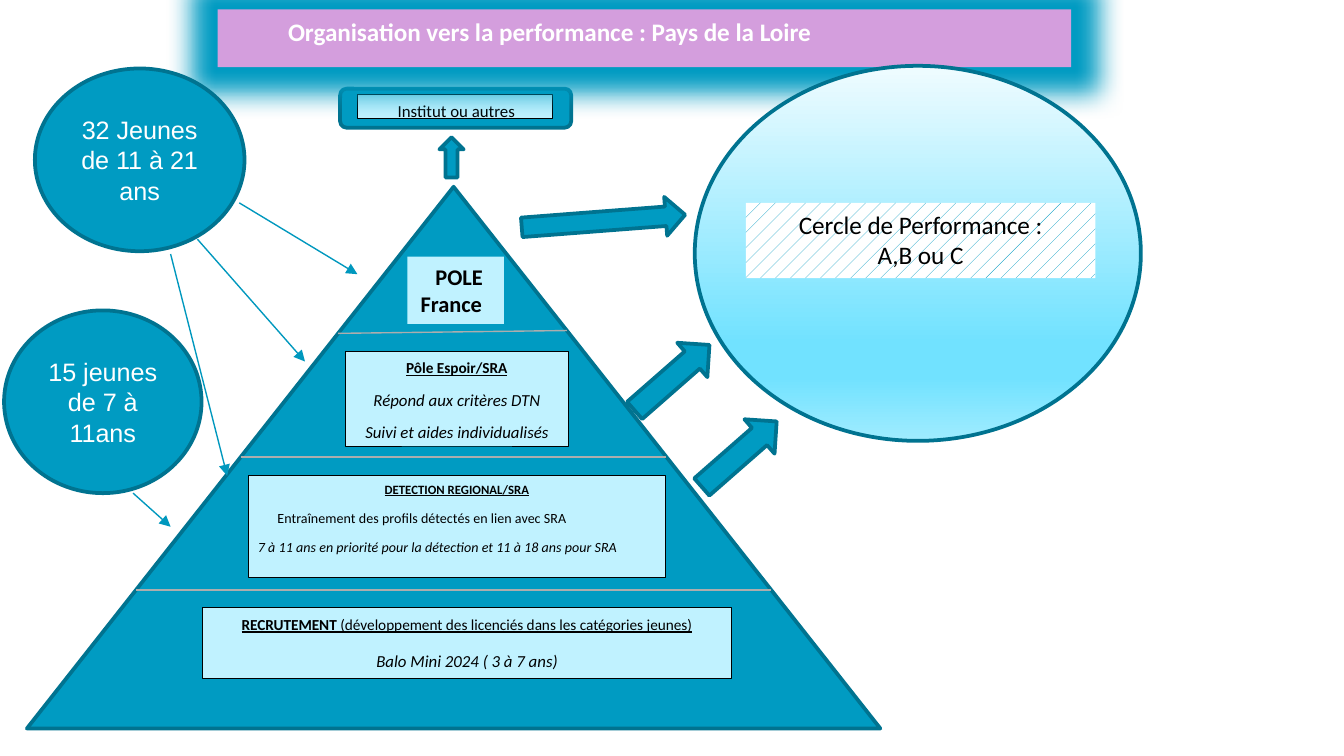
from lxml import etree
from pptx import Presentation
from pptx.dml.color import RGBColor
from pptx.enum.dml import MSO_PATTERN
from pptx.enum.shapes import MSO_CONNECTOR, MSO_SHAPE as Preset
from pptx.enum.text import MSO_ANCHOR as Anchor, MSO_AUTO_SIZE, PP_ALIGN as Align
from pptx.oxml.ns import qn
from pptx.util import Pt

TEAL = RGBColor(0x00, 0x9B, 0xC2)
DARK_TEAL = RGBColor(0x00, 0x73, 0x90)
LINK_TEAL = RGBColor(0x00, 0x98, 0xBE)
PALE = RGBColor(0xC0, 0xF2, 0xFF)
LILAC = RGBColor(0xD4, 0x9E, 0xDD)
GREY = RGBColor(0xAD, 0xAD, 0xAD)
BLACK = RGBColor(0x00, 0x00, 0x00)
WHITE = RGBColor(0xFF, 0xFF, 0xFF)
CIRCLE_STOPS = [
    (0, RGBColor(0xEF, 0xFC, 0xFF)),
    (74, RGBColor(0x71, 0xE2, 0xFF)),
    (83, RGBColor(0x71, 0xE2, 0xFF)),
    (100, RGBColor(0xA0, 0xEC, 0xFF)),
]
WIDE_INSETS = (7.2, 3.6)
TIGHT_INSETS = (5, 2.7)


def add_preset(slide, preset, box, fill=TEAL, outline=DARK_TEAL, weight=2):
    shape = slide.shapes.add_shape(preset, *map(Pt, box))
    shape.shadow.inherit = False
    if fill is not None:
        shape.fill.solid()
        shape.fill.fore_color.rgb = fill
    if outline is None:
        shape.line.fill.background()
    else:
        shape.line.color.rgb = outline
        shape.line.width = Pt(weight)
    return shape


def add_line(slide, start, end, color, arrow=False):
    line = slide.shapes.add_connector(
        MSO_CONNECTOR.STRAIGHT, *map(Pt, (*start, *end)))
    line.line.color.rgb = color
    line.line.width = Pt(0.75)
    properties = line._element.spPr
    if arrow:
        etree.SubElement(properties.find(qn("a:ln")), qn("a:tailEnd"), type="triangle")
    etree.SubElement(properties, qn("a:effectLst"))


def write(shape, paragraphs, color=BLACK, font="Calibri", align=Align.CENTER,
          insets=WIDE_INSETS, anchor=Anchor.TOP, spacing=1, after=0):
    frame = shape.text_frame
    frame.word_wrap = True
    frame.auto_size = MSO_AUTO_SIZE.NONE
    frame.vertical_anchor = anchor
    frame.margin_left = frame.margin_right = Pt(insets[0])
    frame.margin_top = frame.margin_bottom = Pt(insets[1])
    for index, runs in enumerate(paragraphs):
        paragraph = frame.add_paragraph() if index else frame.paragraphs[0]
        paragraph.alignment = align
        paragraph.line_spacing = spacing
        paragraph.space_before = Pt(0)
        paragraph.space_after = Pt(after)
        for text, size, style in runs:
            run = paragraph.add_run()
            run.text = text
            run.font.name = font
            run.font.size = Pt(size)
            run.font.color.rgb = color
            run.font.bold = "b" in style
            run.font.italic = "i" in style
            run.font.underline = "u" in style
    return frame.paragraphs


def indent_first_line(paragraph, points):
    paragraph._p.get_or_add_pPr().set("indent", str(Pt(points)))


def add_tier(slide, box, paragraphs, spacing=1.07, after=6):
    tier = add_preset(slide, Preset.RECTANGLE, box, PALE, BLACK, 0.5)
    return write(tier, paragraphs, insets=TIGHT_INSETS, spacing=spacing, after=after)


def add_pyramid(slide, box):
    left, top, width, height = box
    add_preset(slide, Preset.ISOSCELES_TRIANGLE, box)

    for left_drop, right_drop in ((216, 216), (144.7, 144.7), (78.5, 77)):
        middle, slope = left + width / 2, width / 2 / height
        add_line(slide, (middle - slope * left_drop, top + left_drop),
                 (middle + slope * right_drop, top + right_drop), GREY)

    add_tier(slide, (left + 94.3, top + 225.3, 283, 38.2), [
        [("RECRUTEMENT ", 8.2, "bu"),
         ("(développement des licenciés dans les catégories jeunes)", 8.2, "u")],
        [("Balo Mini 2024 ( 3 à 7 ans)", 9, "i")],
    ], spacing=1.15, after=7.5)

    detection = add_tier(slide, (left + 118.8, top + 154.8, 223.2, 54.7), [
        [("DETECTION REGIONAL/SRA", 6.8, "bu")],
        [("Entraînement des profils détectés en lien avec SRA", 7.5, "")],
        [("7 à 11 ans en priorité pour la détection et 11 à 18 ans pour SRA", 7.5, "i")],
    ])
    for paragraph in detection[1:]:
        paragraph.alignment = Align.LEFT
    indent_first_line(detection[1], 10.5)

    add_tier(slide, (left + 170.6, top + 88.5, 119.5, 50.4), [
        [("Pôle Espoir/SRA", 8.2, "bu")],
        [("Répond aux critères DTN", 9, "i")],
        [("Suivi et aides individualisés", 9, "i")],
    ])

    summit = add_preset(slide, Preset.RECTANGLE,
                        (left + 203.8, top + 37.4, 51.8, 36), PALE, None)
    label = write(summit, [[("POLE France", 12, "b")]], align=Align.LEFT)
    indent_first_line(label[0], 8)


def add_institute(slide, box):
    left, top, width, height = box
    add_preset(slide, Preset.ROUNDED_RECTANGLE, box)
    plate = add_preset(slide, Preset.RECTANGLE,
                       (left + 9.3, top + 2.9, width - 19.4, 13), PALE, BLACK, 0.5)
    label = write(plate, [[("Institut ou autres", 9, "")]], align=Align.LEFT,
                  insets=TIGHT_INSETS, spacing=1.07, after=6)
    indent_first_line(label[0], 16.5)


def add_title_band(slide, box):
    band = slide.shapes.title
    band.left, band.top, band.width, band.height = map(Pt, box)
    band.fill.solid()
    band.fill.fore_color.rgb = LILAC
    effects = etree.SubElement(band._element.spPr, qn("a:effectLst"))
    glow = etree.SubElement(effects, qn("a:glow"), rad=str(Pt(28)))
    etree.SubElement(glow, qn("a:srgbClr"), val=str(TEAL))
    title = write(band, [[("Organisation vers la performance : Pays de la Loire", 13.5, "b")]],
                  WHITE, align=Align.LEFT)
    indent_first_line(title[0], 30.5)
    slide.shapes._spTree.append(band._element)


def add_performance_circle(slide, box):
    left, top, width, height = box
    circle = add_preset(slide, Preset.OVAL, box, None)
    circle.fill.gradient()
    circle.fill.gradient_angle = 270
    stops = circle._element.spPr.find(qn("a:gradFill")).find(qn("a:gsLst"))
    for old_stop in list(stops):
        stops.remove(old_stop)
    for percent, color in CIRCLE_STOPS:
        stop = etree.SubElement(stops, qn("a:gs"), pos=str(percent * 1000))
        etree.SubElement(stop, qn("a:srgbClr"), val=str(color))

    label = add_preset(slide, Preset.RECTANGLE,
                       (left + 27.4, top + 73.4, 187.2, 40.3), None, None)
    label.fill.patterned()
    label.fill.pattern = MSO_PATTERN.PERCENT_10
    label.fill.fore_color.rgb = TEAL
    label.fill.back_color.rgb = WHITE
    write(label, [[("Cercle de Performance :", 13.5, "")], [("A,B ou C", 13.5, "")]])


def add_block_arrow(slide, box, rotation):
    add_preset(slide, Preset.RIGHT_ARROW, box).rotation = rotation


def add_youth_group(slide, box, text, links):
    circle = add_preset(slide, Preset.OVAL, box)
    write(circle, [[(text, 13.5, "")]], WHITE, "Arial", anchor=Anchor.MIDDLE)
    for start, end in links:
        add_line(slide, start, end, LINK_TEAL, arrow=True)


def main():
    deck = Presentation()
    deck.slide_width, deck.slide_height = Pt(720), Pt(405)
    slide = deck.slides.add_slide(deck.slide_layouts[5])

    add_pyramid(slide, (14.4, 100.1, 457.2, 290.2))
    add_institute(slide, (182.2, 47.5, 123.8, 20.9))
    add_title_band(slide, (116.6, 5, 457.2, 31))
    add_performance_circle(slide, (372.2, 35.3, 239, 200.9))
    for box, rotation in (
        ((231.1, 77.8, 21.6, 13), 270),
        ((279.4, 108, 87.8, 20.9), 355.6),
        ((333.4, 190.1, 53.3, 24.5), 318.8),
        ((369.4, 231.1, 53.3, 24.5), 318.8),
    ):
        add_block_arrow(slide, box, rotation)
    add_youth_group(slide, (18.7, 36.7, 112.3, 97.9), "32 Jeunes de 11 à 21 ans", [
        ((128.2, 108.7), (191.5, 146.9)),
        ((105.8, 128.2), (163.4, 193.7)),
        ((91.4, 136.1), (121.7, 254.9)),
    ])
    add_youth_group(slide, (2.2, 166.3, 105.8, 97.9), "15 jeunes de 7 à 11ans", [
        ((71.3, 264.2), (91.4, 282.2)),
    ])
    deck.save("out.pptx")


if __name__ == "__main__":
    main()
